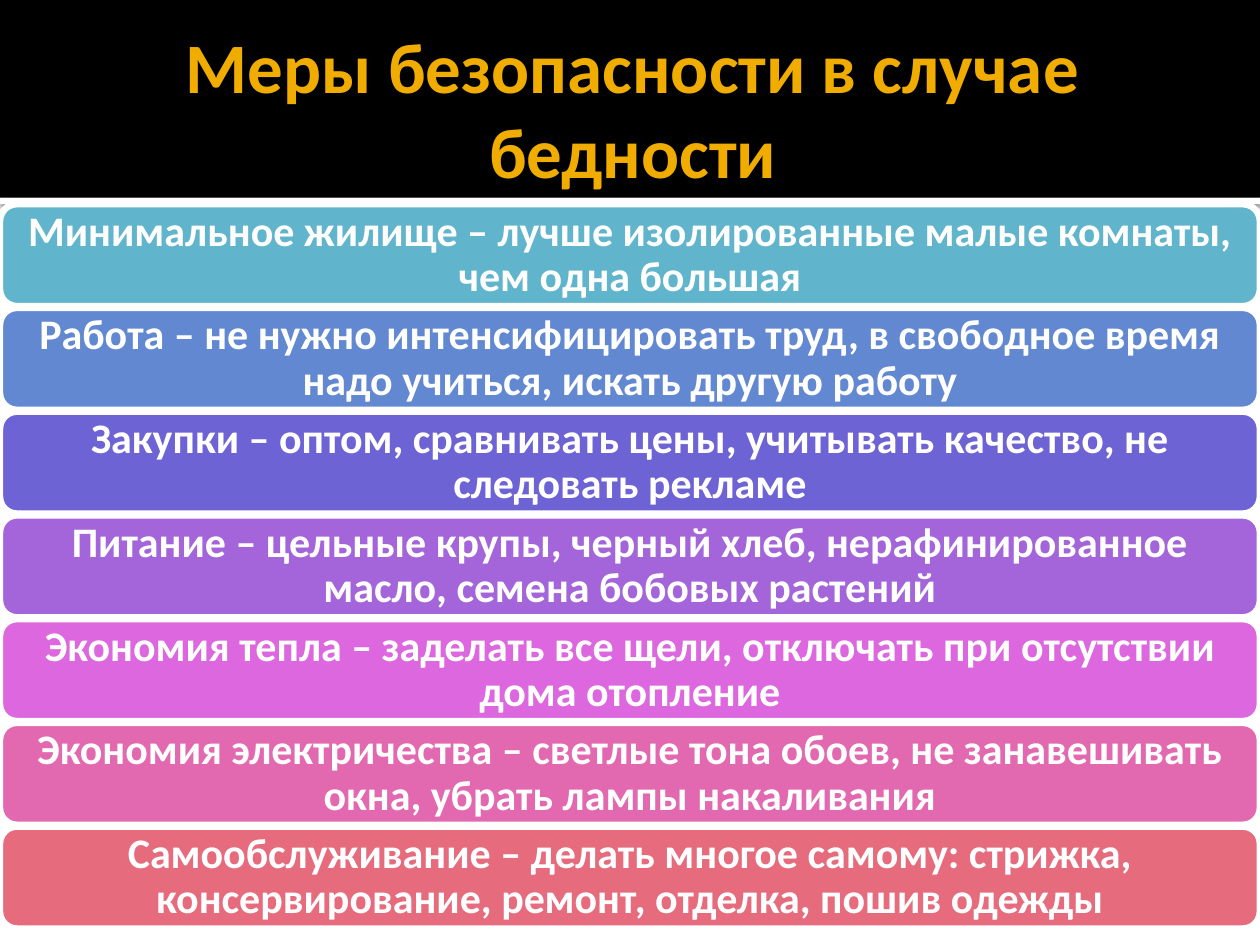
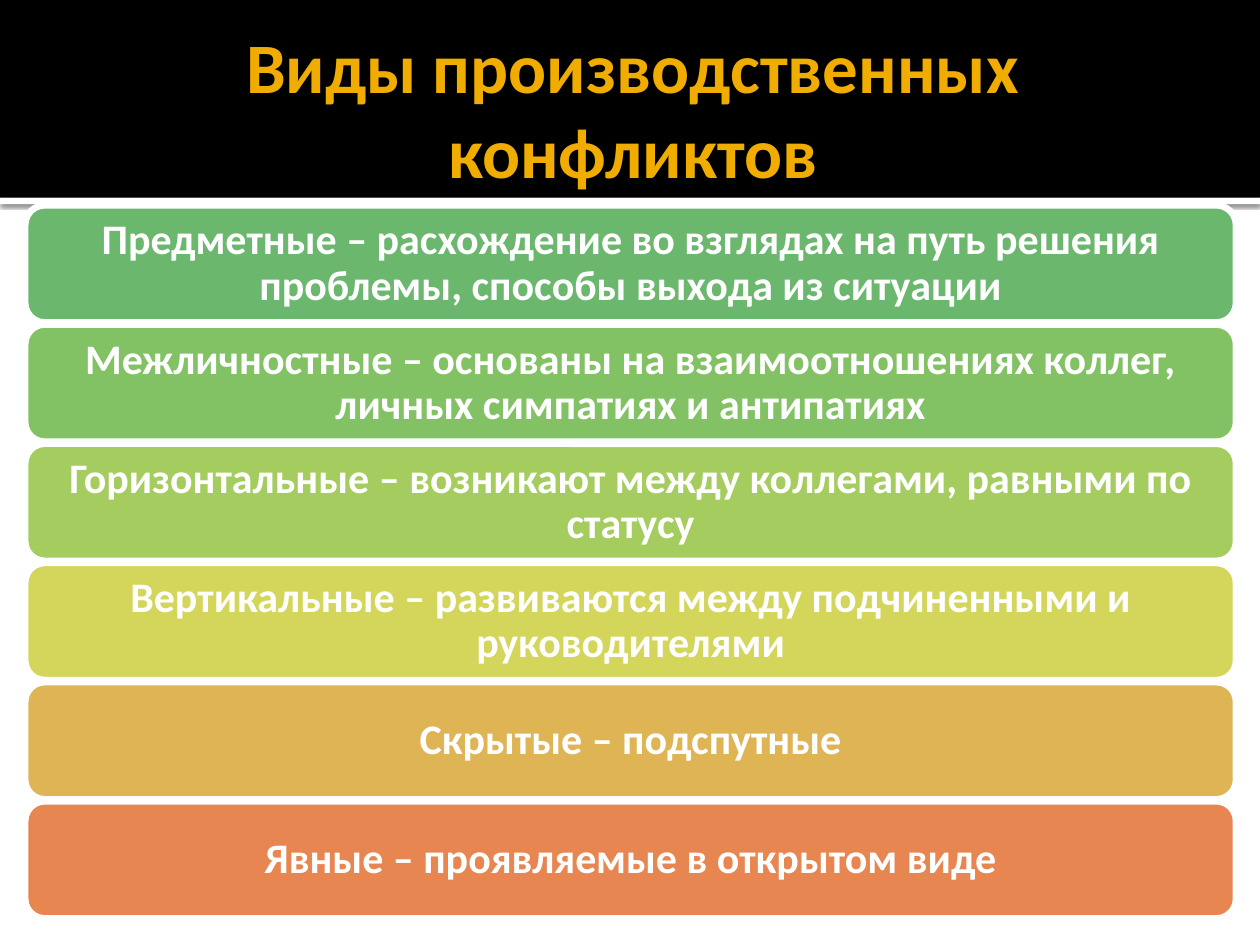
import pptx
import pptx.dml.color
import pptx.enum.shapes
import pptx.enum.text
import pptx.oxml.ns
import pptx.util
from lxml import etree

Inches = pptx.util.Inches
Pt = pptx.util.Pt
SHAPE = pptx.enum.shapes.MSO_SHAPE

COLORS = {"band": "000000", "title": "F0AD00", "white": "FFFFFF", "shadow": "000000"}
FONT = "Calibri"
SLIDE_W, SLIDE_H = 10, 7.5
BAND_H, STRIPE_H = 1.57, 0.05


def rgb(value):
    return pptx.dml.color.RGBColor.from_string(value)


class Deck:
    """Holds the shared style and the current slide."""

    def __init__(self, prs):
        self.prs = prs
        self.s = None

    def new_slide(self, title):
        self.s = self.prs.slides.add_slide(self.prs.slide_layouts[6])
        # Header: white stripe with a shadow, black band, title
        stripe = self.box(SHAPE.RECTANGLE, 0, BAND_H, SLIDE_W, STRIPE_H, COLORS["white"])
        self.drop_shadow(stripe)
        self.box(SHAPE.RECTANGLE, 0, 0, SLIDE_W, BAND_H, COLORS["band"])
        self.title(title)

    def box(self, kind, left, top, width, height, fill):
        sp = self.s.shapes.add_shape(
            kind, Inches(left), Inches(top), Inches(width), Inches(height))
        sp.shadow.inherit = False
        sp.fill.solid()
        sp.fill.fore_color.rgb = rgb(fill)
        sp.line.fill.background()
        return sp

    def drop_shadow(self, sp, blur=2.5, dist=0.8, alpha=60):
        qn = pptx.oxml.ns.qn
        effects = sp._element.spPr.find(qn("a:effectLst"))
        shadow = etree.SubElement(
            effects, qn("a:outerShdw"), blurRad=str(Pt(blur)), dist=str(Pt(dist)),
            dir=str(90 * 60000), algn="t", rotWithShape="0")
        color = etree.SubElement(shadow, qn("a:srgbClr"), val=COLORS["shadow"])
        etree.SubElement(color, qn("a:alpha"), val=str(alpha * 1000))

    def text(self, sp, text, size, color, insets):
        tf = sp.text_frame
        tf.text = text
        tf.word_wrap = True
        tf.vertical_anchor = pptx.enum.text.MSO_ANCHOR.MIDDLE
        tf.margin_left, tf.margin_top, tf.margin_right, tf.margin_bottom = map(Inches, insets)
        p = tf.paragraphs[0]
        p.alignment = pptx.enum.text.PP_ALIGN.CENTER
        font = p.runs[0].font
        font.name, font.size, font.bold = FONT, Pt(size), True
        font.color.rgb = rgb(color)
        return p

    def title(self, text):
        sp = self.s.shapes.add_textbox(Inches(0.5), Inches(0.17), Inches(9), Inches(1.37))
        self.text(sp, text, 40.5, COLORS["title"], (0.1, 0.05, 0.05, 0.05))

    def bars(self, items, left, width, height, first_top, last_top):
        """Stack rounded bars at equal steps from first_top to last_top."""
        step = (last_top - first_top) / (len(items) - 1)
        for i, (fill, text) in enumerate(items):
            sp = self.box(SHAPE.ROUNDED_RECTANGLE, left, first_top + i * step,
                          width, height, fill)
            sp.line.color.rgb = rgb(COLORS["white"])
            sp.line.width = Pt(3.78)
            p = self.text(sp, text, 24, COLORS["white"], (0.06,) * 4)
            p.line_spacing = 0.9


POVERTY_MEASURES = [
    ("60B5CC", "Минимальное жилище – лучше изолированные малые комнаты, чем одна большая"),
    ("6188D1", "Работа – не нужно интенсифицировать труд, в свободное время надо учиться, "
               "искать другую работу"),
    ("6E63D5", "Закупки – оптом, сравнивать цены, учитывать качество, не следовать рекламе"),
    ("A465DA", "Питание – цельные крупы, черный хлеб, нерафинированное масло, "
               "семена бобовых растений"),
    ("DC67DE", "Экономия тепла – заделать все щели, отключать при отсутствии дома отопление"),
    ("E269B0", "Экономия электричества – светлые тона обоев, не занавешивать окна, "
               "убрать лампы накаливания"),
    ("E66C7D", "Самообслуживание – делать многое самому: стрижка, консервирование, "
               "ремонт, отделка, пошив одежды"),
]

CONFLICT_TYPES = [
    ("6BB76D", "Предметные – расхождение во взглядах на путь решения проблемы, "
               "способы выхода из ситуации"),
    ("82C265", "Межличностные – основаны на взаимоотношениях коллег, "
               "личных симпатиях и антипатиях"),
    ("A5CC5F", "Горизонтальные – возникают между коллегами, равными по статусу"),
    ("D3D65A", "Вертикальные – развиваются между подчиненными и руководителями"),
    ("DFB455", "Скрытые – подспутные"),
    ("E88651", "Явные – проявляемые в открытом виде"),
]


def main():
    prs = pptx.Presentation()
    prs.slide_width, prs.slide_height = Inches(SLIDE_W), Inches(SLIDE_H)
    deck = Deck(prs)

    # Slide 1: safety measures
    deck.new_slide("Меры безопасности в случае бедности")
    deck.bars(POVERTY_MEASURES, left=0, width=10, height=0.81, first_top=1.62, last_top=6.56)

    # Slide 2: kinds of conflict
    deck.new_slide("Виды производственных конфликтов")
    deck.bars(CONFLICT_TYPES, left=0.2, width=9.61, height=0.93, first_top=1.63, last_top=6.36)

    prs.save("out.pptx")


if __name__ == "__main__":
    main()
